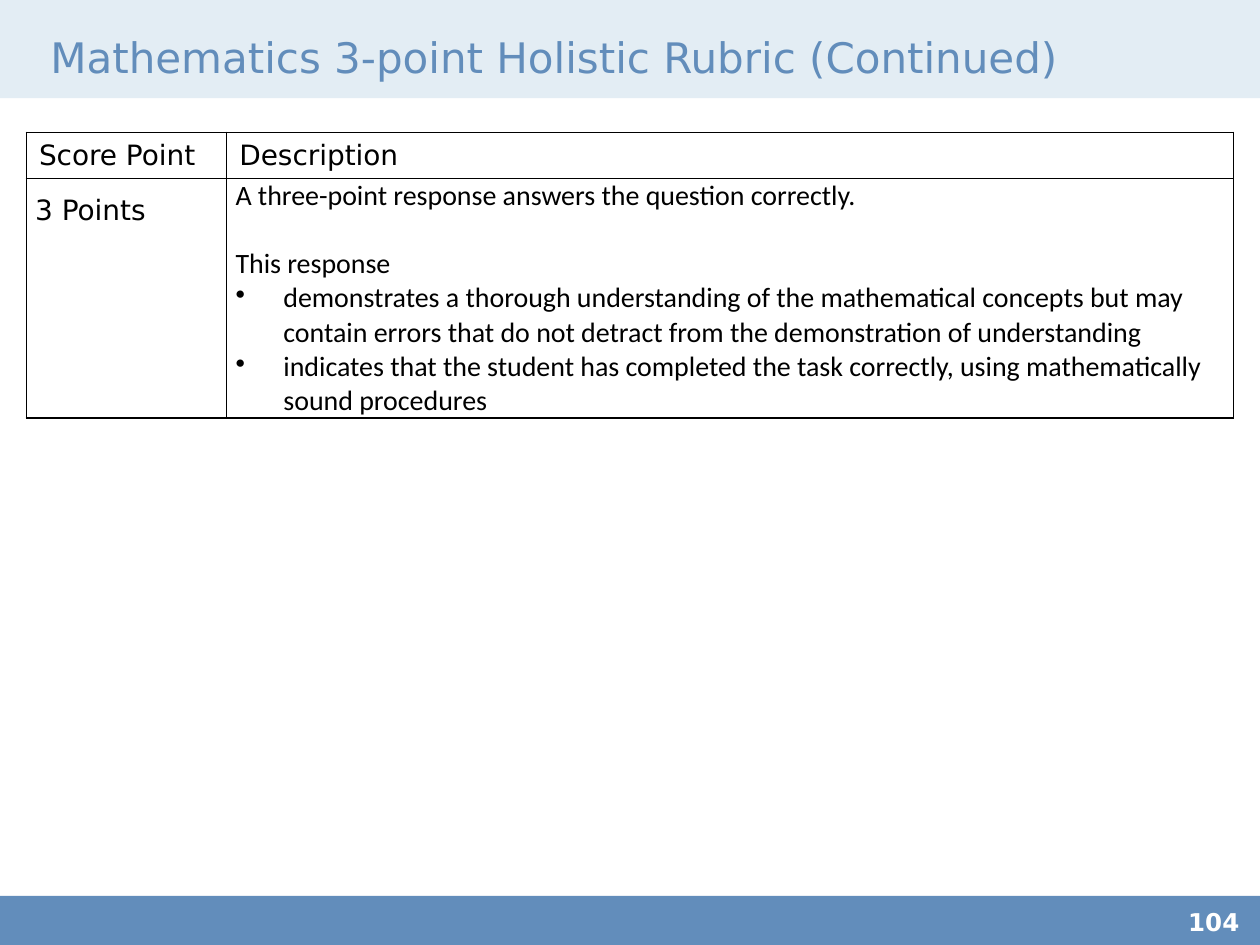
import pptx
import pptx.dml.color
import pptx.enum.shapes
import pptx.enum.text
import pptx.oxml
import pptx.oxml.ns
import pptx.util
from pptx.util import Inches

COLORS = {"blue": "628DBB", "pale": "E3EDF4", "white": "FFFFFF", "black": "000000"}
SANS, BODY = "DejaVu Sans", "Calibri"
ANCHOR = pptx.enum.text.MSO_ANCHOR
NS = pptx.oxml.ns.nsdecls("a")

HEADERS = ["Score Point", "Description"]
SCORE = "3 Points"
INTRO = ["A three-point response answers the question correctly.", "This response"]
CRITERIA = [
    "demonstrates a thorough understanding of the mathematical concepts but may "
    "contain errors that do not detract from the demonstration of understanding",
    "indicates that the student has completed the task correctly, using "
    "mathematically sound procedures",
]


def rgb(name):
    return pptx.dml.color.RGBColor.from_string(COLORS[name])


def style(p, font, size, color, bold=False):
    for r in p.runs:
        r.font.name = font
        r.font.size = pptx.util.Pt(size)
        r.font.color.rgb = rgb(color)
        r.font.bold = bold


def set_margins(box, left, top, right, bottom):
    box.margin_left, box.margin_top = Inches(left), Inches(top)
    box.margin_right, box.margin_bottom = Inches(right), Inches(bottom)


def add_band(s, x, y, w, h, color):
    sp = s.shapes.add_shape(pptx.enum.shapes.MSO_SHAPE.RECTANGLE,
                            Inches(x), Inches(y), Inches(w), Inches(h))
    sp.shadow.inherit = False
    sp.fill.solid()
    sp.fill.fore_color.rgb = rgb(color)
    sp.line.fill.background()


def add_text(s, x, y, w, h, text, size, color, margins=(0, 0, 0, 0),
             anchor=ANCHOR.TOP, bold=False):
    tf = s.shapes.add_textbox(Inches(x), Inches(y), Inches(w), Inches(h)).text_frame
    tf.word_wrap = True
    tf.vertical_anchor = anchor
    set_margins(tf, *margins)
    tf.text = text
    style(tf.paragraphs[0], SANS, size, color, bold)


def add_header(s, x, y, w, h):
    add_band(s, x, y, w, h, "pale")
    add_text(s, x + 0.4, y + 0.23, w - 1, 0.49, "Mathematics 3-point Holistic Rubric (Continued)",
             24, "blue", (0, 0, 0.1, 0.05), ANCHOR.MIDDLE)


def add_footer(s, x, y, w, h):
    add_band(s, x, y, w, h, "blue")
    add_text(s, x + w - 0.57, y + 0.09, 0.57, 0.3, "104", 14, "white", bold=True)


def set_borders(cell):
    tcPr = cell._tc.get_or_add_tcPr()
    for i, side in enumerate("LRTB"):
        tcPr.insert(i, pptx.oxml.parse_xml(
            f'<a:ln{side} {NS} w="12700"><a:solidFill>'
            f'<a:srgbClr val="{COLORS["black"]}"/></a:solidFill></a:ln{side}>'))


def set_bullet(p):
    pPr = p._p.get_or_add_pPr()
    indent = Inches(0.38)
    pPr.set("marL", str(indent))
    pPr.set("indent", str(-indent))
    for xml in (f'<a:buChar {NS} char="•"/>',
                f'<a:tabLst {NS}><a:tab pos="{Inches(0.5)}" algn="l"/></a:tabLst>'):
        pPr.append(pptx.oxml.parse_xml(xml))


def fill_description(cell):
    tf = cell.text_frame
    tf.text = "\n".join(INTRO + CRITERIA)
    for p in tf.paragraphs:
        style(p, BODY, 16, "black")
    tf.paragraphs[1].space_before = pptx.util.Pt(19.5)
    for p in tf.paragraphs[len(INTRO):]:
        set_bullet(p)


def add_rubric(s, x, y, w, h):
    table = s.shapes.add_table(2, 2, Inches(x), Inches(y), Inches(w), Inches(h)).table
    table.first_row = table.horz_banding = False
    score_w, header_h = 1.59, 0.36
    for col, width in zip(table.columns, (score_w, w - score_w)):
        col.width = Inches(width)
    for row, height in zip(table.rows, (header_h, h - header_h)):
        row.height = Inches(height)
    for cell in table.iter_cells():
        cell.fill.background()
        set_borders(cell)
        set_margins(cell, 0.07, 0, 0.07, 0)
    for i, header in enumerate(HEADERS):
        cell = table.cell(0, i)
        set_margins(cell, 0.1, 0.05, 0.1, 0.05)
        cell.vertical_anchor = ANCHOR.BOTTOM
        cell.text_frame.text = header
        style(cell.text_frame.paragraphs[0], SANS, 16, "black")
    tf = table.cell(1, 0).text_frame
    tf.text = SCORE
    tf.paragraphs[0].line_spacing = 1.5
    style(tf.paragraphs[0], SANS, 16, "black")
    fill_description(table.cell(1, 1))


def main():
    prs = pptx.Presentation()
    prs.slide_width, prs.slide_height = Inches(10), Inches(7.5)
    s = prs.slides.add_slide(prs.slide_layouts[6])
    add_header(s, 0, 0, 10, 0.78)
    add_rubric(s, 0.21, 1.05, 9.58, 2.26)
    add_footer(s, 0, 7.11, 10, 0.39)
    prs.save("out.pptx")


if __name__ == "__main__":
    main()
